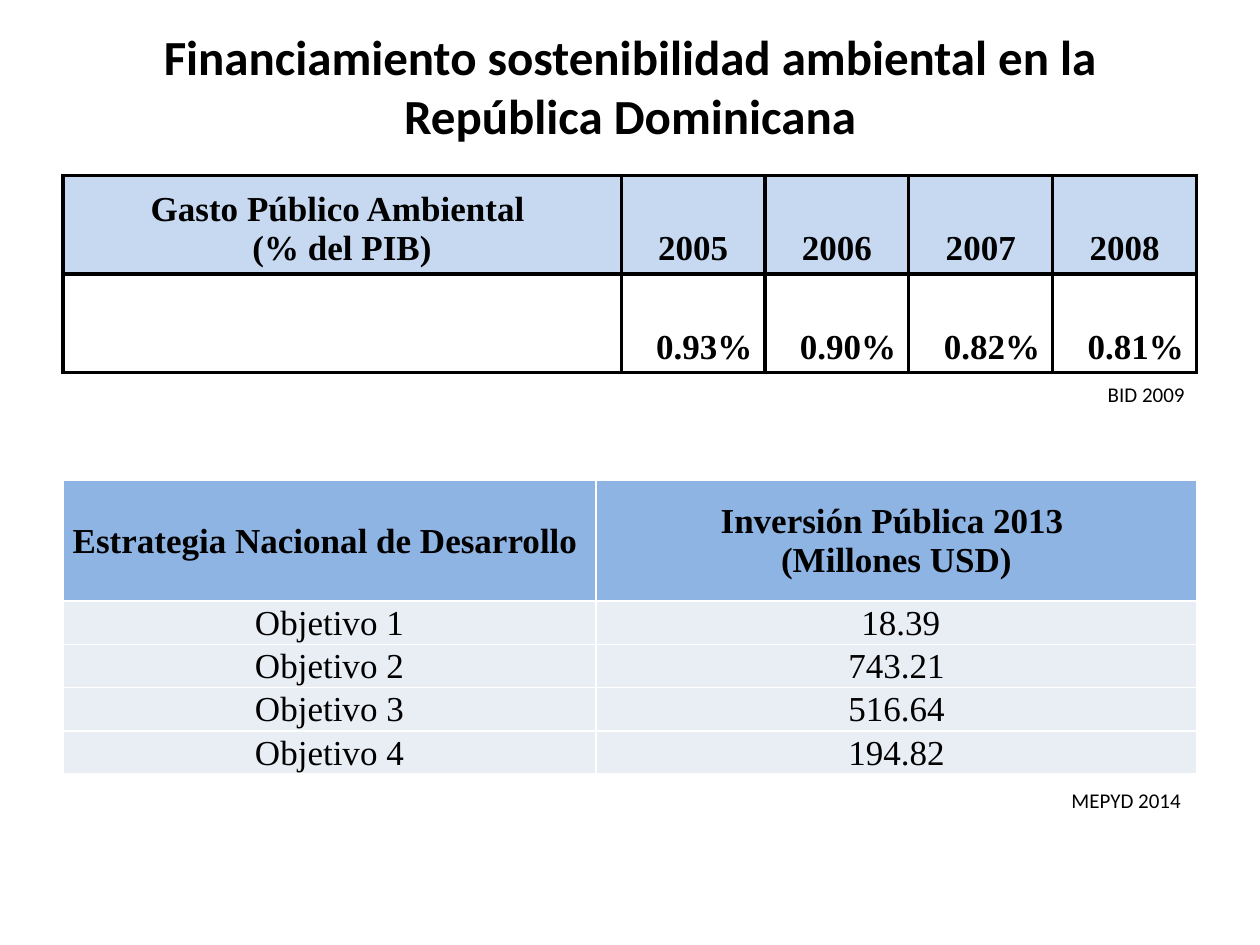
import pptx
import pptx.util
import pptx.dml.color
import pptx.enum.text
import pptx.oxml

ALIGN = pptx.enum.text.PP_ALIGN
ANCHOR = pptx.enum.text.MSO_ANCHOR
FIT = pptx.enum.text.MSO_AUTO_SIZE
BLACK, WHITE = "000000", "FFFFFF"
SKY, BLUE, PALE = "C6D9F1", "8EB4E3", "E9EDF4"
SANS, SERIF = "Calibri", "Times New Roman"
COLS, ROWS = 100, 75
LEFT, WIDE = 5, 90


def color(text):
    """Turn a hex string into a colour."""
    return pptx.dml.color.RGBColor.from_string(text)


class Deck:
    """Hold the style and the current slide, measured on a grid of columns and rows."""

    def __init__(self):
        self.show = pptx.Presentation()
        self.show.slide_width = pptx.util.Inches(10)
        self.show.slide_height = pptx.util.Inches(7.5)
        self.slide = self.show.slides.add_slide(self.show.slide_layouts[5])

    def across(self, cols):
        """Turn grid columns into a length."""
        return round(self.show.slide_width * cols / COLS)

    def down(self, rows):
        """Turn grid rows into a length."""
        return round(self.show.slide_height * rows / ROWS)

    def box(self, left, top, width, height):
        """Turn a grid box into lengths."""
        return self.across(left), self.down(top), self.across(width), self.down(height)

    def label(self, frame, text, size, font, bold=False, align=ALIGN.CENTER):
        """Fill a text frame and format its runs."""
        frame.text = text
        for para in frame.paragraphs:
            para.alignment = align
            for run in para.runs:
                run.font.size = pptx.util.Pt(size)
                run.font.name = font
                run.font.bold = bold
                run.font.color.rgb = color(BLACK)

    def title(self, text, *place):
        """Place and fill the title."""
        head = self.slide.shapes.title
        head.left, head.top, head.width, head.height = self.box(*place)
        frame = head.text_frame
        frame.auto_size = FIT.NONE
        frame.vertical_anchor = ANCHOR.MIDDLE
        self.label(frame, text, 28, SANS, True)

    def source(self, text, left, top):
        """Add a small source line under a table."""
        frame = self.slide.shapes.add_textbox(*self.box(left, top, 11.9, 3)).text_frame
        frame.word_wrap = True
        frame.auto_size = FIT.SHAPE_TO_FIT_TEXT
        self.label(frame, text, 12, SANS, align=ALIGN.RIGHT)

    def border(self, cell, tone, size):
        """Draw the four sides of a cell."""
        for side in "LRTB":
            cell._tc.get_or_add_tcPr().append(pptx.oxml.parse_xml(
                f'<a:ln{side} xmlns:a="http://schemas.openxmlformats.org/drawingml/2006/main"'
                f' w="{pptx.util.Pt(size)}"><a:solidFill><a:srgbClr val="{tone}"/>'
                f'</a:solidFill></a:ln{side}>'))

    def table(self, top, widths, heights, data, fills, line, anchor, bold, align, tight=False):
        """Add a table whose first row is its bold, centred heading."""
        place = self.box(LEFT, top, sum(widths), sum(heights))
        grid = self.slide.shapes.add_table(len(data), len(widths), *place).table
        grid.horz_banding = False
        for col, width in zip(grid.columns, widths):
            col.width = self.across(width)
        for r, (row, height) in enumerate(zip(data, heights)):
            grid.rows[r].height = self.down(height)
            for c, text in enumerate(row):
                cell = grid.cell(r, c)
                self.border(cell, *line)
                fill = fills[min(r, 1)]
                if fill:
                    cell.fill.solid()
                    cell.fill.fore_color.rgb = color(fill)
                else:
                    cell.fill.background()
                if tight:
                    cell.margin_left = cell.margin_right = cell.margin_top = self.across(0.1)
                    cell.margin_bottom = 0
                cell.vertical_anchor = anchor
                self.label(cell.text_frame, text, 20, SERIF, bold or r == 0,
                           align if r else ALIGN.CENTER)


def main():
    """Build the slide and save it."""
    deck = Deck()
    deck.title("Financiamiento sostenibilidad ambiental en la República Dominicana",
               LEFT, 0.5, WIDE, 12.5)
    spend = [
        ["Gasto Público Ambiental \n(% del PIB)", "2005", "2006", "2007", "2008"],
        ["", "0.93%", "0.90%", "0.82%", "0.81%"],
    ]
    deck.table(13.9, [44.3] + [11.42] * 4, [7.85] * 2, spend, (SKY, None),
               (BLACK, 2), ANCHOR.BOTTOM, True, ALIGN.RIGHT)
    deck.source("BID 2009", 83.1, 29.8)
    goals = [
        ["Estrategia Nacional de Desarrollo ", "Inversión Pública 2013 \n(Millones USD)"],
        ["Objetivo 1", " 18.39"],
        ["Objetivo 2", "743.21"],
        ["Objetivo 3", "516.64"],
        ["Objetivo 4", "194.82"],
    ]
    deck.table(38.1, [42.3, 47.7], [9.6] + [3.2] * 4, goals, (BLUE, PALE),
               (WHITE, 1), ANCHOR.MIDDLE, False, ALIGN.CENTER, True)
    deck.source("MEPYD 2014", 82.8, 62)
    deck.show.save("out.pptx")


if __name__ == "__main__":
    main()
